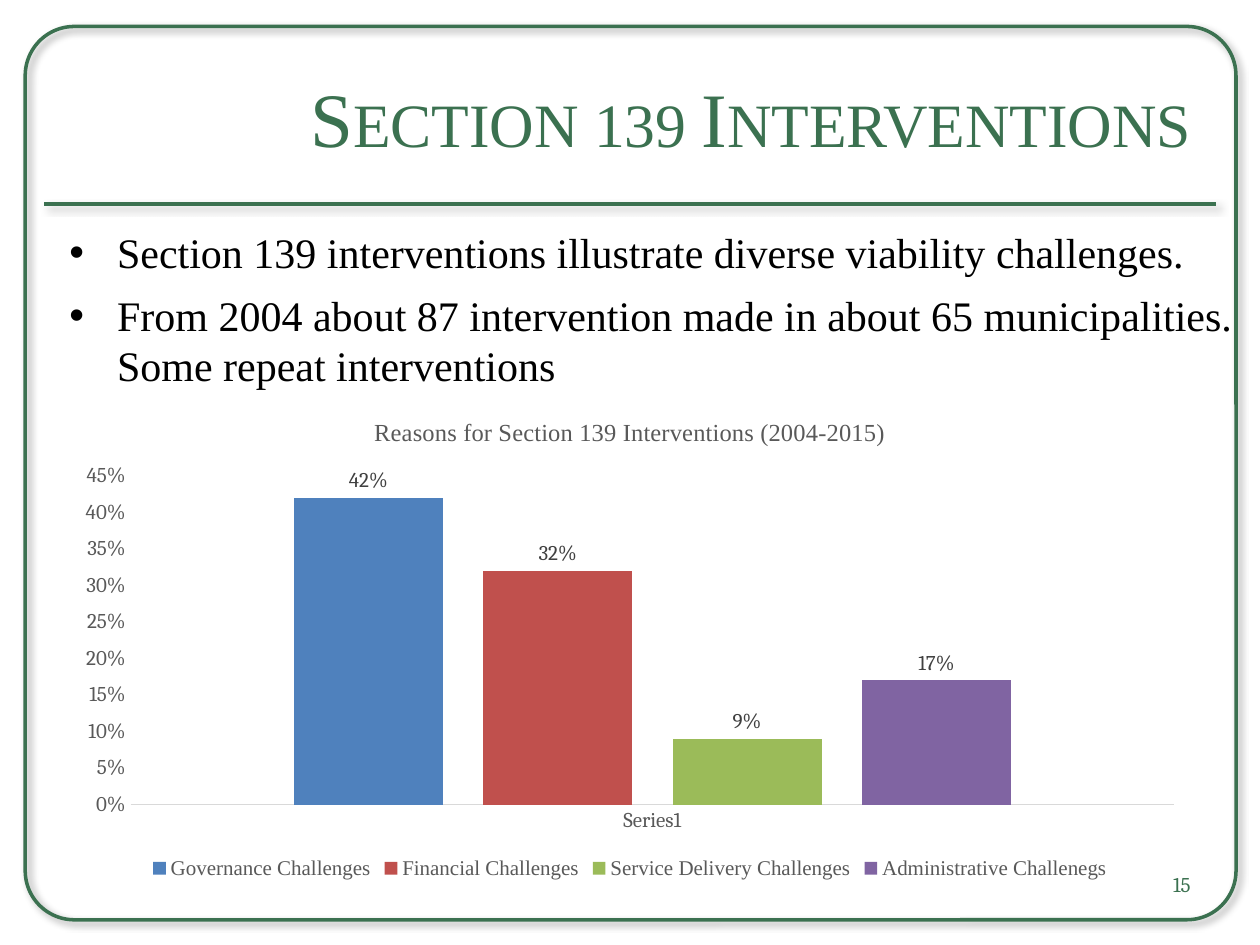
from lxml import etree
from pptx import Presentation
from pptx.chart.data import CategoryChartData
from pptx.dml.color import RGBColor
from pptx.enum.chart import XL_CHART_TYPE, XL_LABEL_POSITION, XL_LEGEND_POSITION, XL_TICK_MARK
from pptx.enum.shapes import MSO_CONNECTOR, MSO_SHAPE
from pptx.enum.text import MSO_ANCHOR, PP_ALIGN
from pptx.oxml import parse_xml
from pptx.oxml.ns import nsdecls, qn
from pptx.util import Inches, Pt

COLORS = {
    "green": "3B7150", "black": "000000", "text": "595959", "label": "404040",
    "axis": "D9D9D9", "governance": "4F81BD", "financial": "C0504D",
    "service": "9BBB59", "administrative": "8064A2",
}
SERIF = "Times New Roman"
CHART_FONT = "Cambria"
BULLETS = [
    "Section 139 interventions illustrate diverse viability challenges.",
    "From 2004 about 87 intervention made in about 65 municipalities. "
    "Some repeat interventions",
]
REASONS = [
    ("Governance Challenges", 0.42, "governance"),
    ("Financial Challenges", 0.32, "financial"),
    ("Service Delivery Challenges", 0.09, "service"),
    ("Administrative Challenegs", 0.17, "administrative"),
]


def rgb(name):
    return RGBColor.from_string(COLORS[name])


def style_font(font, size, color, name):
    font.size = Pt(size)
    font.name = name
    font.color.rgb = rgb(color)


def style_frame(text_frame, anchor):
    text_frame.word_wrap = True
    text_frame.vertical_anchor = anchor
    text_frame.margin_left = text_frame.margin_right = Inches(0.05)
    text_frame.margin_top = text_frame.margin_bottom = Inches(0.05)


def style_outline(shape):
    """Green outline with a soft shadow to the lower right."""
    shape.line.color.rgb = rgb("green")
    shape.line.width = Pt(2)
    shape._element.spPr.append(parse_xml(
        f'<a:effectLst {nsdecls("a")}>'
        f'<a:outerShdw blurRad="{Pt(4)}" dist="{Pt(3)}" dir="{45 * 60000}" algn="tl" rotWithShape="0">'
        f'<a:srgbClr val="{COLORS["black"]}"><a:alpha val="40000"/></a:srgbClr>'
        '</a:outerShdw></a:effectLst>'))


def add_frame(slide, left, top, width, height):
    frame = slide.shapes.add_shape(MSO_SHAPE.ROUNDED_RECTANGLE, left, top, width, height)
    frame.adjustments[0] = 0.055
    frame.fill.background()
    style_outline(frame)


def add_rule(slide, left, top, width):
    rule = slide.shapes.add_connector(MSO_CONNECTOR.STRAIGHT, left, top, left + width, top)
    style_outline(rule)


def set_title(slide, left, top, width, height):
    title = slide.shapes.title
    title.left, title.top, title.width, title.height = left, top, width, height
    style_frame(title.text_frame, MSO_ANCHOR.MIDDLE)
    paragraph = title.text_frame.paragraphs[0]
    paragraph.alignment = PP_ALIGN.RIGHT
    run = paragraph.add_run()
    run.text = "Section 139 Interventions"
    style_font(run.font, 44, "green", SERIF)
    run._r.get_or_add_rPr().set("cap", "small")


def add_bullets(slide, left, top, width, height):
    text_frame = slide.shapes.add_textbox(left, top, width, height).text_frame
    style_frame(text_frame, MSO_ANCHOR.TOP)
    for index, text in enumerate(BULLETS):
        paragraph = text_frame.add_paragraph() if index else text_frame.paragraphs[0]
        properties = paragraph._p.get_or_add_pPr()
        properties.set("marL", str(Inches(0.38)))
        properties.set("indent", str(-Inches(0.38)))
        etree.SubElement(properties, qn("a:buFont")).set("typeface", "Arial")
        etree.SubElement(properties, qn("a:buChar")).set("char", "•")
        if index:
            paragraph.space_before = Pt(7)
        run = paragraph.add_run()
        run.text = text
        style_font(run.font, 24, "black", SERIF)


def add_reasons_chart(slide, left, top, width, height):
    data = CategoryChartData(number_format="0%")
    data.categories = ["Series1"]
    for name, share, _ in REASONS:
        data.add_series(name, [share])
    chart = slide.shapes.add_chart(
        XL_CHART_TYPE.COLUMN_CLUSTERED, left, top, width, height, data).chart
    style_font(chart.font, 12, "black", CHART_FONT)

    # Title and legend
    chart.has_title = True
    run = chart.chart_title.text_frame.paragraphs[0].add_run()
    run.text = "Reasons for Section 139 Interventions (2004-2015)"
    style_font(run.font, 14, "text", SERIF)
    run.font.bold = False
    chart.chart_title.include_in_layout = False
    chart.has_legend = True
    chart.legend.position = XL_LEGEND_POSITION.BOTTOM
    chart.legend.include_in_layout = False
    style_font(chart.legend.font, 12, "text", SERIF)

    # Axes
    for axis in (chart.category_axis, chart.value_axis):
        axis.major_tick_mark = axis.minor_tick_mark = XL_TICK_MARK.NONE
        axis.has_major_gridlines = False
        style_font(axis.tick_labels.font, 12, "text", CHART_FONT)
    chart.category_axis.format.line.color.rgb = rgb("axis")
    chart.category_axis.format.line.width = Pt(0.75)
    value_axis = chart.value_axis
    value_axis.format.line.fill.background()
    value_axis.minimum_scale, value_axis.maximum_scale = 0, 0.45
    value_axis.major_unit = 0.05
    value_axis.tick_labels.number_format = "0%"
    value_axis.tick_labels.number_format_is_linked = False

    # Columns
    plot = chart.plots[0]
    plot.gap_width, plot.overlap = 219, -27
    plot.vary_by_categories = False
    for series, (_, _, color) in zip(plot.series, REASONS):
        series.format.fill.solid()
        series.format.fill.fore_color.rgb = rgb(color)
        labels = series.data_labels
        labels.show_value = True
        labels.position = XL_LABEL_POSITION.OUTSIDE_END
        style_font(labels.font, 12, "label", CHART_FONT)


def add_page_number(slide, left, top, width, height):
    text_frame = slide.shapes.add_textbox(left, top, width, height).text_frame
    style_frame(text_frame, MSO_ANCHOR.MIDDLE)
    paragraph = text_frame.paragraphs[0]
    paragraph.alignment = PP_ALIGN.RIGHT
    run = paragraph.add_run()
    run.text = "15"
    style_font(run.font, 12, "green", CHART_FONT)


def main():
    presentation = Presentation()
    presentation.slide_width, presentation.slide_height = Inches(10), Inches(7.5)
    slide = presentation.slides.add_slide(presentation.slide_layouts[5])
    add_frame(slide, Inches(0.2), Inches(0.21), Inches(9.61), Inches(7.09))
    add_rule(slide, Inches(0.35), Inches(1.62), Inches(9.3))
    set_title(slide, Inches(0.5), Inches(0.1), Inches(9), Inches(1.65))
    add_bullets(slide, Inches(0.5), Inches(1.75), Inches(9.5), Inches(5.75))
    add_reasons_chart(slide, Inches(0.5), Inches(3.14), Inches(9), Inches(3.88))
    add_page_number(slide, Inches(7.17), Inches(6.87), Inches(2.33), Inches(0.3))
    presentation.save("out.pptx")


if __name__ == "__main__":
    main()
